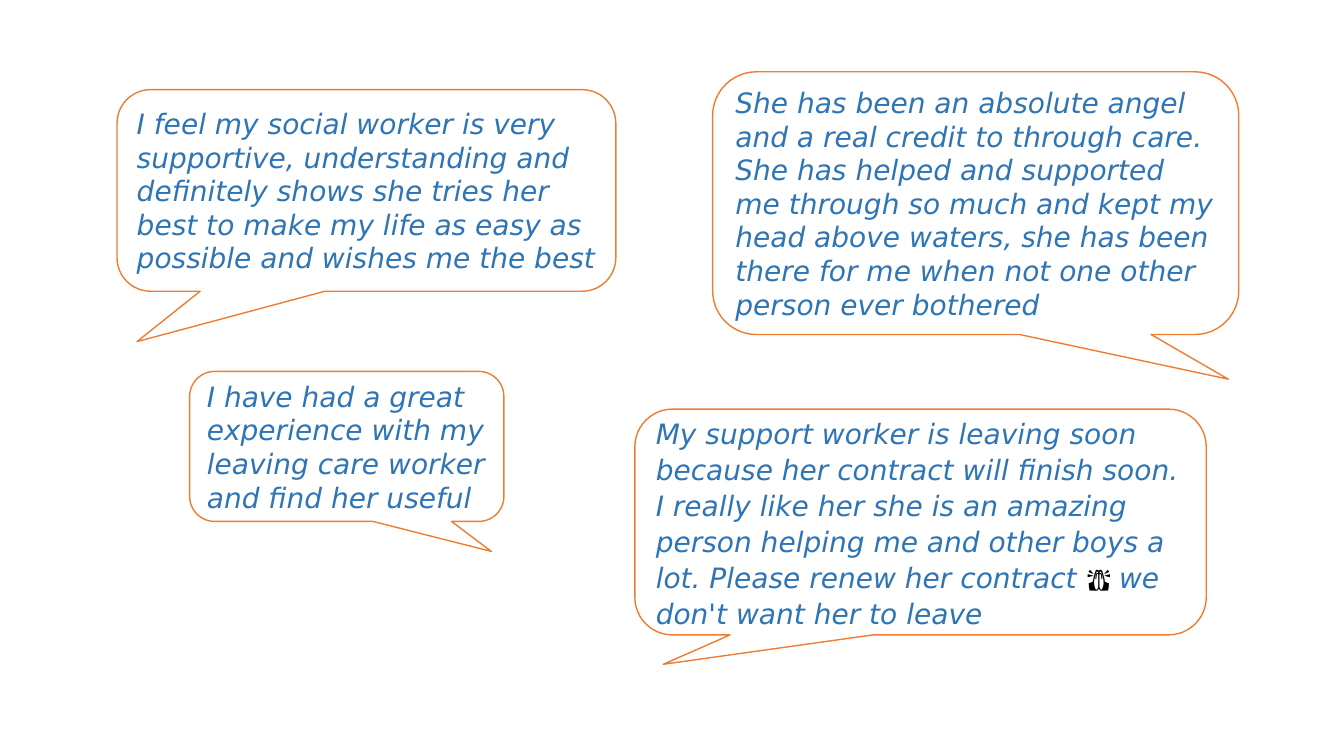
"""Build a slide of four speech bubbles with quotes about support workers."""
from pptx import Presentation
from pptx.dml.color import RGBColor as RGB
from pptx.enum.shapes import MSO_SHAPE as SHAPE
from pptx.enum.text import MSO_ANCHOR as ANCHOR, PP_ALIGN as ALIGN
from pptx.util import Cm, Pt

COLORS = {"fill": "FFFFFF", "line": "ED7D31", "text": "2E75B6", "emoji": "000000"}
EMOJI = "🙏 "

quotes = [
    ((17.96, 1.81, 13.26, 6.62), (0.48, 0.67),
     ["She has been an absolute angel and a real credit to through care. "
      "She has helped and supported me through so much and kept my head above "
      "waters, she has been there for me when not one other person ever bothered"]),
    ((2.95, 2.26, 12.57, 5.08), (-0.46, 0.75),
     ["I feel my social worker is very supportive, understanding and definitely "
      "shows she tries her best to make my life as easy as possible and wishes "
      "me the best"]),
    ((16, 10.31, 14.4, 5.69), (-0.45, 0.63),
     ["My support worker is leaving soon because her contract will finish soon. "
      "I really like her she is an amazing person helping me and other boys a "
      "lot. Please renew her contract ", EMOJI, "we don't want her to leave"]),
    ((4.78, 9.36, 7.92, 3.78), (0.46, 0.7),
     ["I have had a great experience with my leaving care worker and find her "
      "useful"]),
]

prs = Presentation()
prs.slide_width, prs.slide_height = Cm(33.87), Cm(19.05)
s = prs.slides.add_slide(prs.slide_layouts[6])

for box, tail, texts in quotes:
    sp = s.shapes.add_shape(SHAPE.ROUNDED_RECTANGULAR_CALLOUT, *map(Cm, box))
    sp.adjustments[0], sp.adjustments[1] = tail
    sp.shadow.inherit = False
    sp.fill.solid()
    sp.fill.fore_color.rgb = RGB.from_string(COLORS["fill"])
    sp.line.color.rgb = RGB.from_string(COLORS["line"])
    sp.line.width = Pt(1)

    tf = sp.text_frame
    tf.word_wrap = True
    tf.vertical_anchor = ANCHOR.MIDDLE
    p = tf.paragraphs[0]
    p.alignment = ALIGN.LEFT
    p.font.name = "DejaVu Sans"
    p.font.size = Pt(20)
    p.font.italic = True
    p.font.color.rgb = RGB.from_string(COLORS["text"])
    if EMOJI in texts:
        p.line_spacing = 1.07
        p.space_after = Pt(8)

    for text in texts:
        r = p.add_run()
        r.text = text
        if text == EMOJI:
            r.font.name = "Lato"
            r.font.italic = False
            r.font.color.rgb = RGB.from_string(COLORS["emoji"])

prs.save("out.pptx")
